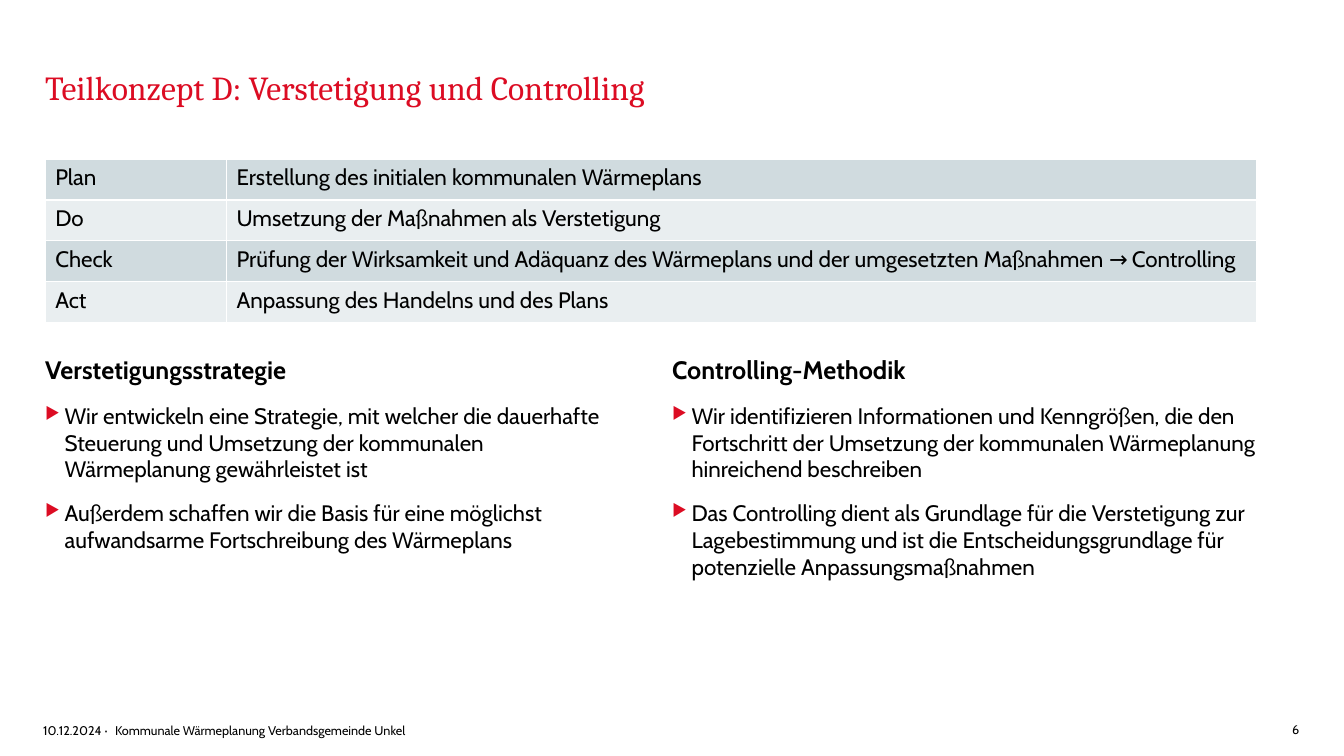
from lxml.etree import SubElement
from pptx import Presentation
from pptx.dml.color import RGBColor
from pptx.enum.text import MSO_ANCHOR as Anchor, PP_ALIGN as Align
from pptx.oxml.ns import qn
from pptx.util import Cm, Pt

RED, BLACK, WHITE = "DC0C23", "000000", "FFFFFF"
BAND_DARK, BAND_LIGHT = "D0DBDF", "E9EEF0"


def color(value):
    return RGBColor.from_string(value)


def write(paragraph, text, size=16, font="Cabin", fill=BLACK, bold=False,
          align=Align.LEFT, after=0, bullet=False):
    if bullet:
        properties = paragraph._p.get_or_add_pPr()
        properties.set("marL", str(Cm(0.49)))
        properties.set("indent", str(-Cm(0.49)))
        bullet_color = SubElement(properties, qn("a:buClr"))
        SubElement(bullet_color, qn("a:srgbClr"), val=RED)
        SubElement(properties, qn("a:buSzPct"), val="75000")
        SubElement(properties, qn("a:buChar"), char="▶")
    paragraph.alignment = align
    paragraph.space_after = Pt(after)
    run = paragraph.add_run()
    run.text = text
    run.font.size = Pt(size)
    run.font.name = font
    run.font.bold = bold
    run.font.color.rgb = color(fill)


presentation = Presentation()
presentation.slide_width = Cm(33.87)
presentation.slide_height = Cm(19.05)
slide = presentation.slides.add_slide(presentation.slide_layouts[6])

title = [("Teilkonzept D: Verstetigung und Controlling",
          dict(size=24, font="Cambria", fill=RED))]
footer = [("Kommunale Wärmeplanung Verbandsgemeinde Unkel", dict(size=9))]
date = [("10.12.2024 ·", dict(size=9))]
page_number = [("6", dict(size=9, align=Align.RIGHT))]

heading = dict(size=18, bold=True, after=12)
item = dict(after=12, bullet=True)
strategy = [
    ("Verstetigungsstrategie", heading),
    ("Wir entwickeln eine Strategie, mit welcher die dauerhafte Steuerung und "
     "Umsetzung der kommunalen Wärmeplanung gewährleistet ist", item),
    ("Außerdem schaffen wir die Basis für eine möglichst aufwandsarme "
     "Fortschreibung des Wärmeplans", item),
]
controlling = [
    ("Controlling-Methodik", heading),
    ("Wir identifizieren Informationen und Kenngrößen, die den Fortschritt der "
     "Umsetzung der kommunalen Wärmeplanung hinreichend beschreiben", item),
    ("Das Controlling dient als Grundlage für die Verstetigung zur "
     "Lagebestimmung und ist die Entscheidungsgrundlage für potenzielle "
     "Anpassungsmaßnahmen", item),
]

text_boxes = [
    (1.14, 0.71, 28.93, 1.98, Anchor.BOTTOM, 0, title),
    (1.14, 8.89, 14.2, 6.12, Anchor.TOP, 0.05, strategy),
    (16.94, 8.89, 15.01, 5.79, Anchor.TOP, 0.05, controlling),
    (1.09, 18.21, 1.63, 0.38, Anchor.TOP, 0, date),
    (2.9, 18.21, 16.33, 0.38, Anchor.MIDDLE, 0, footer),
    (31.55, 18.08, 1.19, 0.61, Anchor.MIDDLE, 0, page_number),
]
for left, top, width, height, anchor, inset, content in text_boxes:
    box = slide.shapes.add_textbox(Cm(left), Cm(top), Cm(width), Cm(height))
    frame = box.text_frame
    frame.word_wrap = True
    frame.vertical_anchor = anchor
    frame.margin_left = frame.margin_right = frame.margin_bottom = 0
    frame.margin_top = Cm(inset)
    for index, (text, style) in enumerate(content):
        paragraph = frame.add_paragraph() if index else frame.paragraphs[0]
        write(paragraph, text, **style)

steps = [
    ("Plan", "Erstellung des initialen kommunalen Wärmeplans"),
    ("Do", "Umsetzung der Maßnahmen als Verstetigung"),
    ("Check", "Prüfung der Wirksamkeit und Adäquanz des Wärmeplans und der "
              "umgesetzten Maßnahmen → Controlling"),
    ("Act", "Anpassung des Handelns und des Plans"),
]
row_height = 1.03
table = slide.shapes.add_table(len(steps), 2, Cm(1.14), Cm(4.01), Cm(30.53),
                               Cm(row_height * len(steps))).table
table.first_row = False
table.columns[0].width = Cm(4.57)
table.columns[1].width = Cm(25.96)
for row, step in enumerate(steps):
    table.rows[row].height = Cm(row_height)
    for column, text in enumerate(step):
        cell = table.cell(row, column)
        write(cell.text_frame.paragraphs[0], text)
        cell_properties = cell._tc.get_or_add_tcPr()
        for side in ("lnL", "lnR", "lnT", "lnB"):
            border = SubElement(cell_properties, qn("a:" + side), w=str(Pt(1)))
            border_fill = SubElement(border, qn("a:solidFill"))
            SubElement(border_fill, qn("a:srgbClr"), val=WHITE)
        cell.fill.solid()
        cell.fill.fore_color.rgb = color(BAND_LIGHT if row % 2 else BAND_DARK)

presentation.save("out.pptx")
